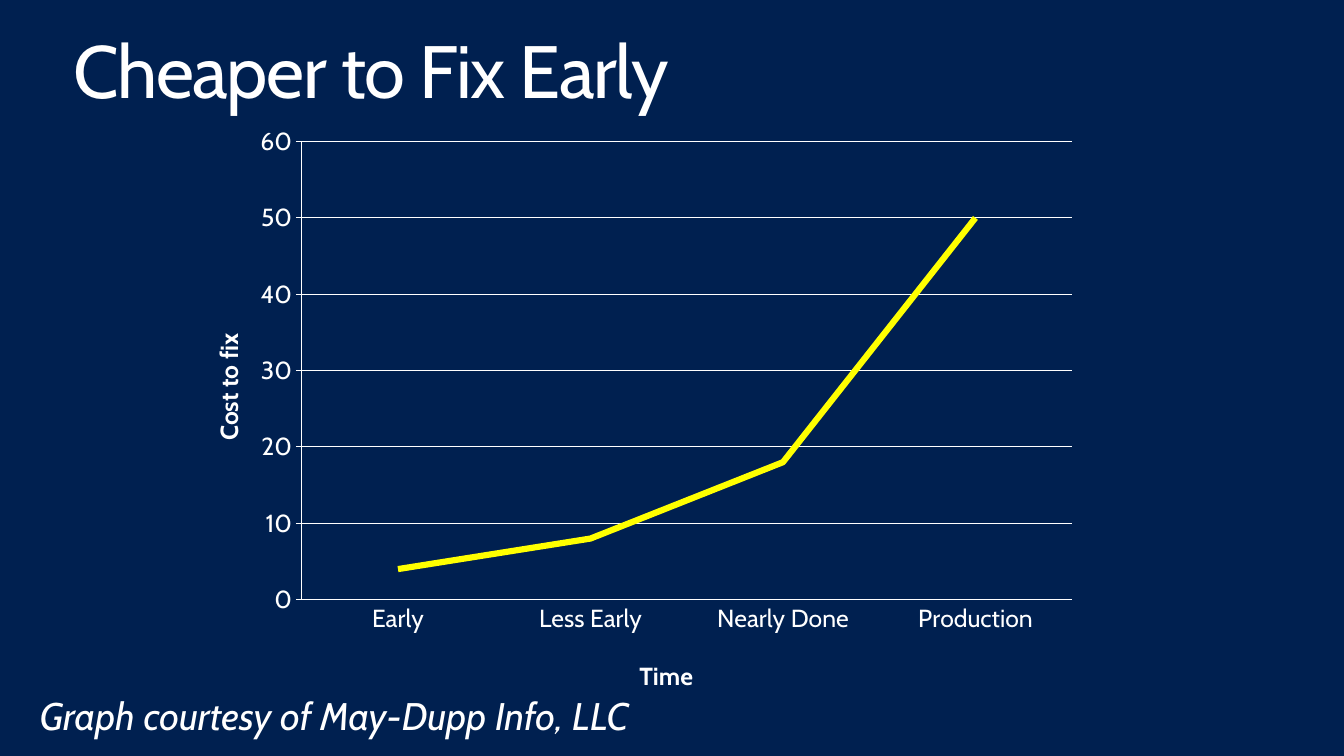
from lxml.etree import SubElement
from pptx import Presentation
from pptx.chart.data import CategoryChartData
from pptx.dml.color import RGBColor
from pptx.enum.chart import XL_CHART_TYPE as CT, XL_MARKER_STYLE as MS, XL_TICK_MARK as TM
from pptx.enum.text import MSO_ANCHOR as ANCHOR, MSO_AUTO_SIZE as FIT, PP_ALIGN as ALIGN
from pptx.oxml.ns import qn
from pptx.util import Pt

COLORS = {"navy": "002050", "white": "FFFFFF", "yellow": "FFFF00"}
FONT = "Cabin"


def rgb(name):
    return RGBColor.from_string(COLORS[name])


def style_font(font, size, bold=False, italic=False):
    font.name = FONT
    font.size = Pt(size)
    font.bold = bold
    font.italic = italic
    font.color.rgb = rgb("white")


def style_line(line, color, width):
    line.color.rgb = rgb(color)
    line.width = Pt(width)


def fill_placeholder(sp, text, box, size, fit=FIT.NONE, italic=False):
    sp.left, sp.top, sp.width, sp.height = map(Pt, box)
    tf = sp.text_frame
    tf.text = text
    tf.word_wrap = True
    tf.auto_size = fit
    tf.vertical_anchor = ANCHOR.TOP
    tf.margin_left = tf.margin_right = Pt(11.5)
    tf.margin_top = tf.margin_bottom = Pt(7.2)
    p = tf.paragraphs[0]
    p.alignment = ALIGN.LEFT
    p.line_spacing = 0.9
    r = p.runs[0]
    style_font(r.font, size, italic=italic)
    return p, r


def set_layout(parent, index, **values):
    for old in parent.findall(qn("c:layout")):
        parent.remove(old)
    layout = SubElement(parent, qn("c:layout"))
    parent.insert(index, layout)
    manual = SubElement(layout, qn("c:manualLayout"))
    for tag, value in values.items():
        SubElement(manual, qn(f"c:{tag}")).set("val", str(value))


def style_axis(axis, title, x, y, tick):
    style_font(axis.tick_labels.font, 18)
    style_line(axis.format.line, "white", 0.75)
    axis.major_tick_mark = tick
    axis.minor_tick_mark = TM.NONE
    tf = axis.axis_title.text_frame
    tf.text = title
    style_font(tf.paragraphs[0].runs[0].font, 18, bold=True)
    set_layout(axis.axis_title.element, 1, xMode="edge", yMode="edge", x=x, y=y)


def add_cost_chart(slide):
    data = CategoryChartData()
    data.categories = ["Early", "Less Early", "Nearly Done", "Production"]
    data.add_series("Series 1", [4, 8, 18, 50])
    chart = slide.shapes.add_chart(
        CT.LINE_STACKED, Pt(131), Pt(84.2), Pt(663.1), Pt(431.3), data).chart
    chart.has_title = chart.has_legend = False
    style_font(chart.font, 18)

    plot = chart.plots[0]
    plot.vary_by_categories = False
    series = plot.series[0]
    series.smooth = False
    series.marker.style = MS.NONE
    style_line(series.format.line, "yellow", 4.5)

    style_axis(chart.category_axis, "Time", 0.5, 0.91, TM.NONE)
    cost = chart.value_axis
    style_axis(cost, "Cost to fix", 0.03, 0.36, TM.OUTSIDE)
    cost.minimum_scale, cost.maximum_scale, cost.major_unit = 0, 60, 10
    cost.has_major_gridlines = True
    style_line(cost.major_gridlines.format.line, "white", 0.75)
    set_layout(chart.element.find(".//" + qn("c:plotArea")), 0, layoutTarget="inner",
               xMode="edge", yMode="edge", x=0.134, y=0.044, w=0.846, h=0.774)


def main():
    prs = Presentation()
    prs.slide_width, prs.slide_height = Pt(979.2), Pt(550.8)
    slide = prs.slides.add_slide(prs.slide_layouts[1])
    slide.background.fill.solid()
    slide.background.fill.fore_color.rgb = rgb("navy")

    _, r = fill_placeholder(slide.shapes.title, "Cheaper to Fix Early",
                            (41.8, 18, 895.7, 49), 54)
    r.font._element.set("spc", "-100")
    p, _ = fill_placeholder(slide.placeholders[1], "Graph courtesy of May-Dupp Info, LLC",
                            (17.3, 501.1, 895.7, 45.4), 28, FIT.SHAPE_TO_FIT_TEXT, True)
    pPr = p._p.get_or_add_pPr()
    pPr.set("marL", "0")
    pPr.set("indent", "0")
    SubElement(pPr, qn("a:buNone"))
    add_cost_chart(slide)
    prs.save("out.pptx")


if __name__ == "__main__":
    main()
